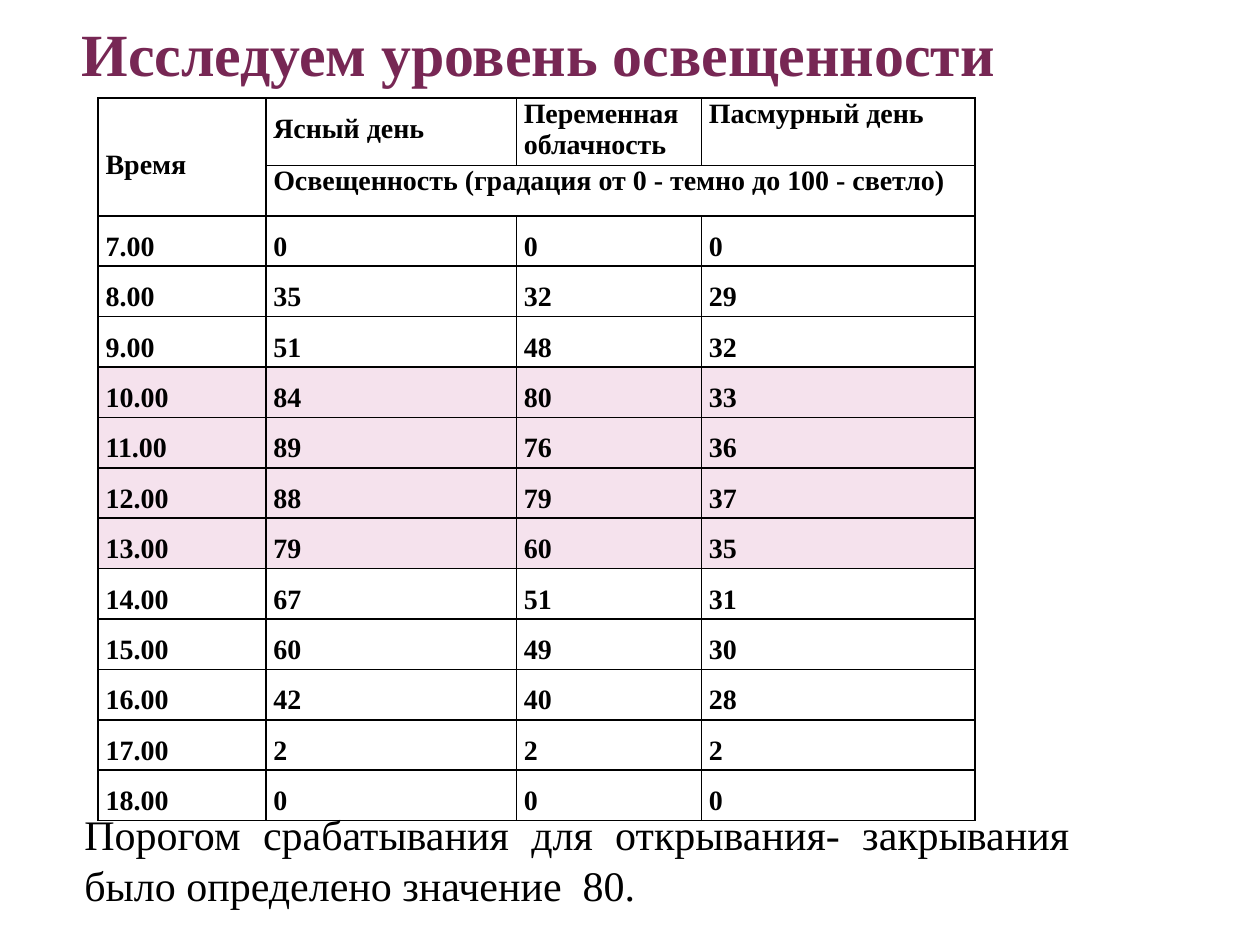
from pptx import Presentation
from pptx.dml.color import RGBColor
from pptx.enum.text import MSO_ANCHOR, PP_ALIGN
from pptx.oxml import parse_xml
from pptx.oxml.ns import nsdecls
from pptx.util import Cm, Pt

BLACK = RGBColor(0x00, 0x00, 0x00)
PLUM = RGBColor(0x77, 0x27, 0x54)
PINK = RGBColor(0xF5, 0xE2, 0xED)
TOP, MIDDLE, BOTTOM = MSO_ANCHOR.TOP, MSO_ANCHOR.MIDDLE, MSO_ANCHOR.BOTTOM
LEFT, JUSTIFY = PP_ALIGN.LEFT, PP_ALIGN.JUSTIFY
FACE = "Times New Roman"

TITLE = {"size": Pt(34.2), "bold": True, "name": FACE}
NOTE = {"size": Pt(24), "bold": False, "name": FACE}
ENTRY = {"size": Pt(16), "bold": True, "name": FACE}

WIDTHS = [3.38, 5.05, 3.73, 5.51]
HEIGHTS = [1.27, 0.95] + [0.96] * 12
HEADS = ["Время", "Ясный день", "Переменная облачность", "Пасмурный день"]
SCALE = "Освещенность (градация от 0 - темно до 100 - светло)"
LEVELS = [
    (0, 0, 0), (35, 32, 29), (51, 48, 32), (84, 80, 33),
    (89, 76, 36), (88, 79, 37), (79, 60, 35), (67, 51, 31),
    (60, 49, 30), (42, 40, 28), (2, 2, 2), (0, 0, 0),
]
START = 7
PEAK = range(10, 14)


def assign(item, values):
    for key, value in values.items():
        setattr(item, key, value)


def write(frame, text, style, color, align, spacing=1.0):
    frame.text = text
    line = frame.paragraphs[0]
    assign(line, {"alignment": align, "line_spacing": spacing})
    font = line.runs[0].font
    assign(font, style)
    font.color.rgb = color


def add_label(slide, box, text, style, color, align):
    frame = slide.shapes.add_textbox(*map(Cm, box)).text_frame
    assign(frame, {
        "word_wrap": True, "vertical_anchor": BOTTOM,
        "margin_left": Cm(0.13), "margin_right": Cm(0.13),
        "margin_top": 0, "margin_bottom": 0,
    })
    write(frame, text, style, color, align)


def add_border(cell):
    props = cell._tc.get_or_add_tcPr()
    for side in ("lnL", "lnR", "lnT", "lnB"):
        props.append(parse_xml(
            f'<a:{side} {nsdecls("a")} w="{Pt(1)}"><a:solidFill>'
            f'<a:srgbClr val="{BLACK}"/></a:solidFill></a:{side}>'
        ))


def fill_cell(cell, text, align=JUSTIFY, spacing=1.5, anchor=TOP):
    assign(cell, {
        "margin_left": Cm(0.15), "margin_right": Cm(0.15),
        "margin_top": 0, "margin_bottom": 0, "vertical_anchor": anchor,
    })
    write(cell.text_frame, text, ENTRY, BLACK, align, spacing)


def add_levels(slide, left, top):
    size = Cm(sum(WIDTHS)), Cm(sum(HEIGHTS))
    table = slide.shapes.add_table(
        len(HEIGHTS), len(WIDTHS), Cm(left), Cm(top), *size
    ).table
    assign(table, {"first_row": False, "horz_banding": False})
    for column, width in zip(table.columns, WIDTHS):
        column.width = Cm(width)
    for row, height in zip(table.rows, HEIGHTS):
        row.height = Cm(height)
    for cell in table.iter_cells():
        add_border(cell)
        cell.fill.background()

    table.cell(0, 0).merge(table.cell(1, 0))
    table.cell(1, 1).merge(table.cell(1, 3))
    fill_cell(table.cell(0, 0), HEADS[0], align=LEFT, anchor=MIDDLE)
    fill_cell(table.cell(0, 1), HEADS[1])
    for col in (2, 3):
        fill_cell(table.cell(0, col), HEADS[col], spacing=1.0)
    fill_cell(table.cell(1, 1), SCALE, spacing=1.0)

    for index, levels in enumerate(LEVELS):
        hour = START + index
        for col, value in enumerate((f"{hour}.00", *levels)):
            cell = table.cell(index + 2, col)
            fill_cell(cell, str(value))
            if hour in PEAK:
                cell.fill.solid()
                cell.fill.fore_color.rgb = PINK


def main():
    deck = Presentation()
    assign(deck, {"slide_width": Cm(25.4), "slide_height": Cm(19.05)})
    slide = deck.slides.add_slide(deck.slide_layouts[6])
    add_label(slide, (1.57, 15.67, 20.12, 2.67),
              "Порогом срабатывания для открывания- закрывания "
              "было определено значение  80.", NOTE, BLACK, JUSTIFY)
    add_levels(slide, 1.98, 1.98)
    add_label(slide, (1.52, 0, 20.12, 1.78),
              "Исследуем уровень освещенности", TITLE, PLUM, LEFT)
    deck.save("out.pptx")


if __name__ == "__main__":
    main()
